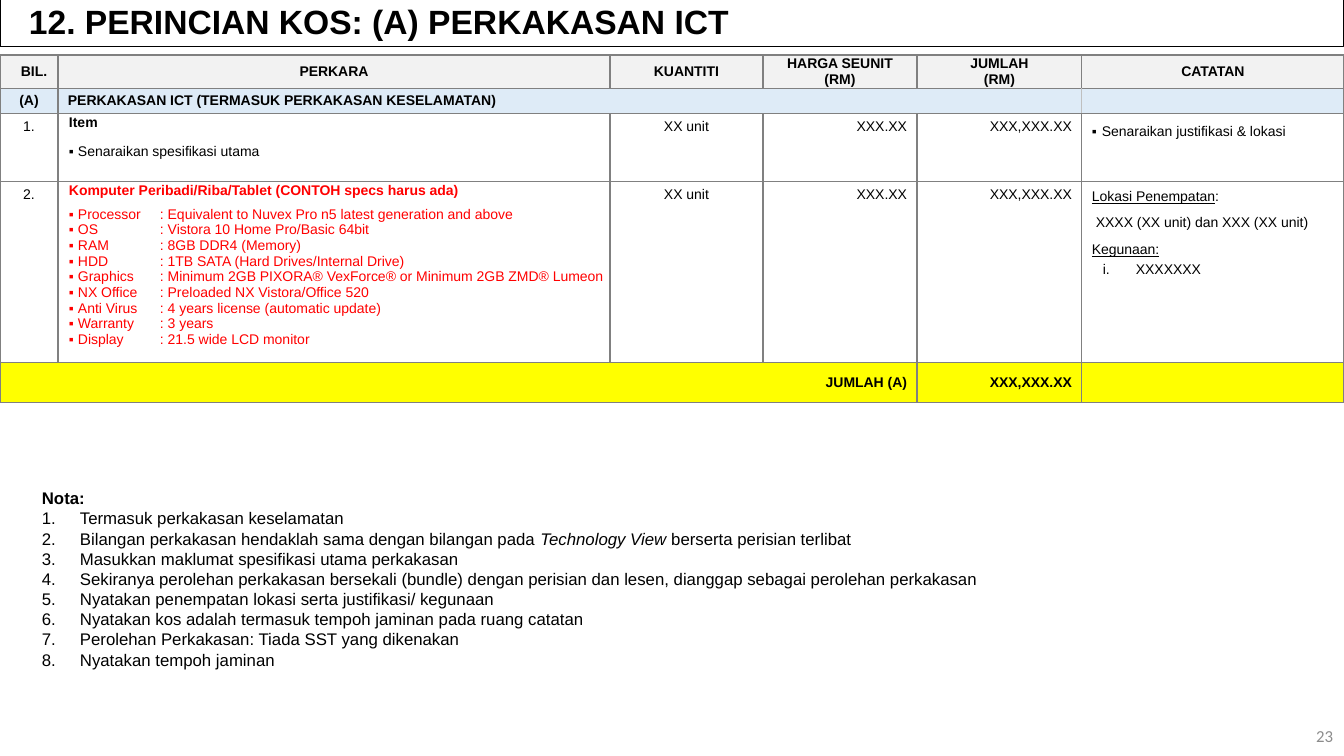
from lxml import etree
from pptx import Presentation
from pptx.dml.color import RGBColor
from pptx.enum.shapes import MSO_SHAPE
from pptx.enum.text import MSO_ANCHOR, PP_ALIGN
from pptx.oxml.ns import qn
from pptx.util import Pt

LEFT, CENTER, RIGHT = PP_ALIGN.LEFT, PP_ALIGN.CENTER, PP_ALIGN.RIGHT
TOP, MIDDLE = MSO_ANCHOR.TOP, MSO_ANCHOR.MIDDLE
RECTANGLE = MSO_SHAPE.RECTANGLE

BLACK = RGBColor(0x00, 0x00, 0x00)
RED = RGBColor(0xFF, 0x00, 0x00)
GREY = RGBColor(0x8C, 0x8C, 0x8C)
HEADER_GREY = RGBColor(0xF2, 0xF2, 0xF2)
SECTION_BLUE = RGBColor(0xDE, 0xEB, 0xF7)
TOTAL_YELLOW = RGBColor(0xFF, 0xFF, 0x00)
BORDER = RGBColor(0x80, 0x80, 0x80)
PALE_BORDER = RGBColor(0xBF, 0xBF, 0xBF)

EMU_PER_PX = 914400 / 100.8


def px(length):
    return round(length * EMU_PER_PX)


def write(frame, text, size=10, bold=False, color=BLACK, align=LEFT, font="Arial",
          indent=(0, 0), bullet=None, numbering=None, tab=None, spacing=None,
          before=0, after=0):
    """Add a paragraph, or fill the empty first one; text is a string or (text, style) runs."""
    paragraph = frame.paragraphs[0]
    if paragraph.runs:
        paragraph = frame.add_paragraph()
    properties = paragraph._p.get_or_add_pPr()
    properties.set("marL", str(px(indent[0])))
    properties.set("indent", str(px(indent[1])))
    if bullet:
        etree.SubElement(properties, qn("a:buFont"), typeface="Arial")
        etree.SubElement(properties, qn("a:buChar"), char=bullet)
    elif numbering:
        etree.SubElement(properties, qn("a:buFont"), typeface="+mj-lt")
        etree.SubElement(properties, qn("a:buAutoNum"), type=numbering)
    if tab:
        properties.set("defTabSz", str(px(tab)))
        tabs = etree.SubElement(properties, qn("a:tabLst"))
        etree.SubElement(tabs, qn("a:tab"), pos=str(px(tab)), algn="l")
    paragraph.alignment = align
    paragraph.space_before, paragraph.space_after = Pt(before), Pt(after)
    if spacing:
        paragraph.line_spacing = spacing
    paragraph.font.size, paragraph.font.bold = Pt(size), bold
    paragraph.font.name = font
    paragraph.font.color.rgb = color
    for words, style in [(text, "")] if isinstance(text, str) else text:
        run = paragraph.add_run()
        run.text = words
        if style == "underline":
            run.font.underline = True
        elif style == "italic":
            run.font.italic = True


presentation = Presentation()
presentation.slide_width, presentation.slide_height = px(1344), px(756)
slide = presentation.slides.add_slide(presentation.slide_layouts[6])

# Page number
page_number = slide.shapes.add_textbox(px(1041), px(716), px(302), px(40)).text_frame
page_number.word_wrap = True
page_number.vertical_anchor = MIDDLE
write(page_number, "23", size=12, color=GREY, align=RIGHT, font="Calibri")

# Cost table
column_widths = [58, 552, 153, 154, 165, 262]
row_heights = [33, 25, 68, 181, 40]
row_fills = [HEADER_GREY, SECTION_BLUE, None, None, TOTAL_YELLOW]
costs = slide.shapes.add_table(len(row_heights), len(column_widths), 0, px(55),
                               px(sum(column_widths)), px(sum(row_heights))).table
costs.first_row = costs.horz_banding = False
for column, width in zip(costs.columns, column_widths):
    column.width = px(width)
for row, height in zip(costs.rows, row_heights):
    row.height = px(height)

for r, fill in enumerate(row_fills):
    for c in range(len(column_widths)):
        cell = costs.cell(r, c)
        cell.vertical_anchor = MIDDLE if fill else TOP
        tight = r == 0 or (c == 1 and r in (2, 3))
        cell.margin_left = cell.margin_right = px(1 if tight else 10)
        cell.margin_top = px(0 if r == 0 else 1 if tight else 4 if r == 1 else 5)
        cell.margin_bottom = px(0 if tight else 4 if r == 1 else 5)
        cell_properties = cell._tc.get_or_add_tcPr()
        for side in ("lnL", "lnR", "lnT", "lnB"):
            pale = r == 1 and (c, side) in ((4, "lnR"), (1, "lnR"), (5, "lnL"))
            line = etree.SubElement(cell_properties, qn(f"a:{side}"), w=str(Pt(1)))
            line_fill = etree.SubElement(line, qn("a:solidFill"))
            etree.SubElement(line_fill, qn("a:srgbClr"),
                             val=str(PALE_BORDER if pale else BORDER))
        if fill:
            cell.fill.solid()
            cell.fill.fore_color.rgb = fill
        else:
            cell.fill.background()
        cell.text_frame.paragraphs[0]._p.get_or_add_endParaRPr().set("sz", "1000")

costs.cell(1, 1).merge(costs.cell(1, 4))
costs.cell(4, 0).merge(costs.cell(4, 3))

headings = [["BIL."], ["PERKARA"], ["KUANTITI"], ["HARGA SEUNIT", "(RM)"],
            ["JUMLAH", "(RM)"], ["CATATAN"]]
for c, heading in enumerate(headings):
    for heading_line in heading:
        write(costs.cell(0, c).text_frame, heading_line, bold=True, align=CENTER,
              indent=(10 if c == 0 else 0, 0))

write(costs.cell(1, 0).text_frame, "(A)", bold=True, align=CENTER)
write(costs.cell(1, 1).text_frame, "PERKAKASAN ICT (TERMASUK PERKAKASAN KESELAMATAN)",
      bold=True)

for r, number in ((2, "1."), (3, "2.")):
    for c, value, align in ((0, number, CENTER), (2, "XX unit", CENTER),
                            (3, "XXX.XX", RIGHT), (4, "XXX,XXX.XX", RIGHT)):
        write(costs.cell(r, c).text_frame, value, align=align)

item = costs.cell(2, 1).text_frame
write(item, "Item", bold=True, indent=(10, 0), after=6)
write(item, "Senaraikan spesifikasi utama", indent=(19, -9), bullet="▪", spacing=Pt(15.1))
write(costs.cell(2, 5).text_frame, "Senaraikan justifikasi & lokasi",
      indent=(10, -10), bullet="▪", spacing=Pt(15.1))

computer = costs.cell(3, 1).text_frame
write(computer, "Komputer Peribadi/Riba/Tablet (CONTOH specs harus ada)",
      bold=True, color=RED, indent=(10, 0), after=6)
specifications = [
    ("Processor", "Equivalent to Nuvex Pro n5 latest generation and above"),
    ("OS", "Vistora 10 Home Pro/Basic 64bit"),
    ("RAM", "8GB DDR4 (Memory)"),
    ("HDD", "1TB SATA (Hard Drives/Internal Drive)"),
    ("Graphics", "Minimum 2GB PIXORA® VexForce® or Minimum 2GB ZMD® Lumeon"),
    ("NX Office", "Preloaded NX Vistora/Office 520"),
    ("Anti Virus", "4 years license (automatic update)"),
    ("Warranty", "3 years"),
    ("Display", "21.5 wide LCD monitor"),
]
for part, requirement in specifications:
    write(computer, f"{part}\t: {requirement}", color=RED, indent=(19, -9),
          bullet="▪", tab=101)

remarks = costs.cell(3, 5).text_frame
for remark, left in (([("Lokasi Penempatan", "underline"), (":", "")], 0),
                     ("XXXX (XX unit) dan XXX (XX unit)", 4),
                     ([("Kegunaan:", "underline")], 0)):
    write(remarks, remark, indent=(left, 0), spacing=1.15, before=3, after=3)
write(remarks, "XXXXXXX", indent=(44, -33), numbering="romanLcPeriod")

write(costs.cell(4, 0).text_frame, "JUMLAH (A)", bold=True, align=RIGHT)
write(costs.cell(4, 4).text_frame, "XXX,XXX.XX", bold=True, align=RIGHT)

# Title bar
title_bar = slide.shapes.add_shape(RECTANGLE, 0, 0, px(1344), px(47))
title_bar.shadow.inherit = False
title_bar.fill.background()
title_bar.line.color.rgb = BLACK
title_bar.line.width = Pt(0.75)
title_bar.text_frame.vertical_anchor = MIDDLE
write(title_bar.text_frame, "12. PERINCIAN KOS: (A) PERKAKASAN ICT", size=24, bold=True,
      indent=(19, 0), spacing=0.9)

# Notes under the table
notes = slide.shapes.add_textbox(px(32), px(483), px(1279), px(193)).text_frame
notes.word_wrap = True
write(notes, "Nota:", size=12, bold=True)
for note in (
    "Termasuk perkakasan keselamatan",
    [("Bilangan perkakasan hendaklah sama dengan bilangan pada ", ""),
     ("Technology View ", "italic"), ("berserta perisian terlibat", "")],
    "Masukkan maklumat spesifikasi utama perkakasan",
    "Sekiranya perolehan perkakasan bersekali (bundle) dengan perisian dan lesen, "
    "dianggap sebagai perolehan perkakasan",
    "Nyatakan penempatan lokasi serta justifikasi/ kegunaan",
    "Nyatakan kos adalah termasuk tempoh jaminan pada ruang catatan",
    "Perolehan Perkakasan: Tiada SST yang dikenakan",
    "Nyatakan tempoh jaminan",
):
    write(notes, note, size=12, indent=(38, -38), numbering="arabicPeriod")

presentation.save("out.pptx")
